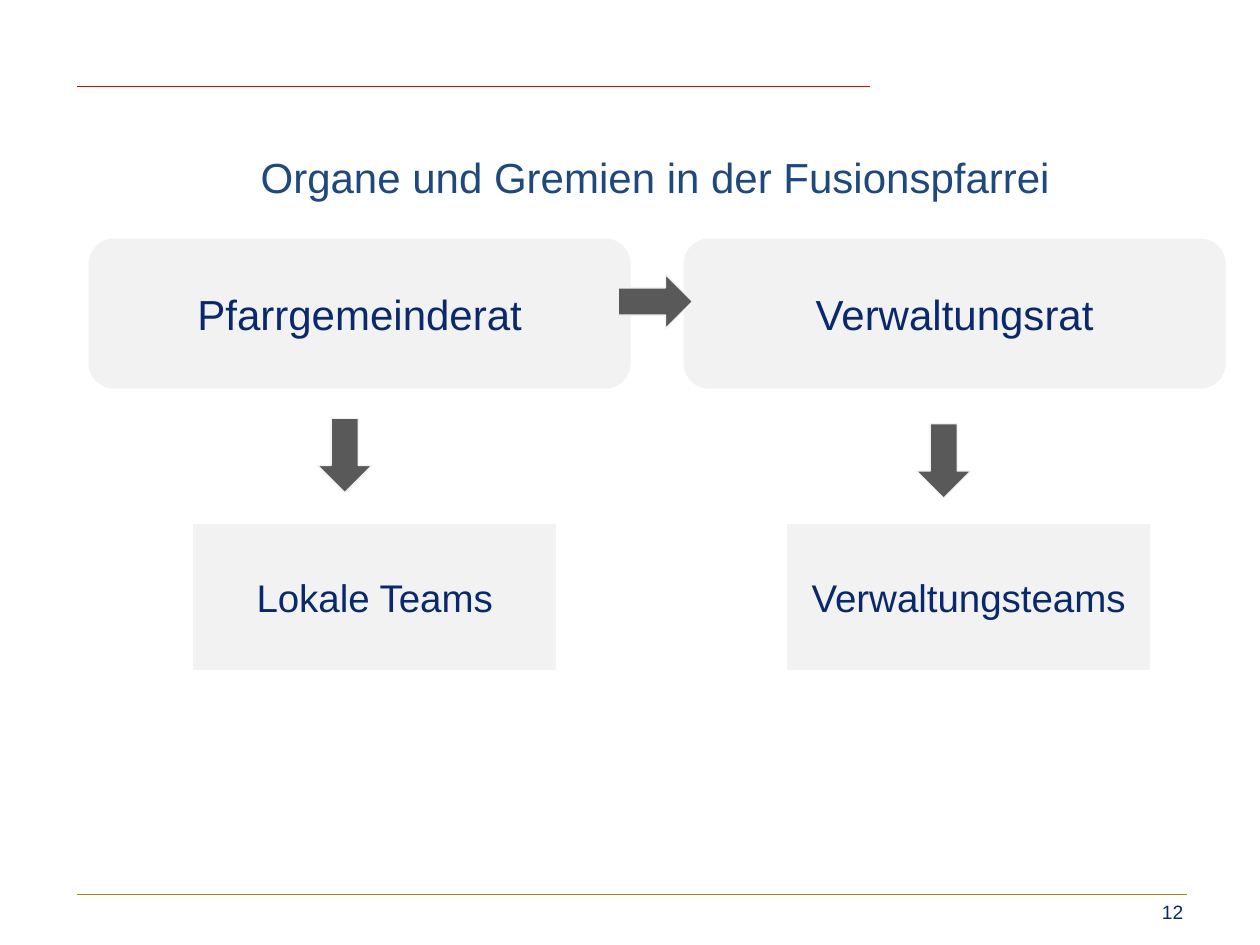
from lxml import etree
from pptx import Presentation
from pptx import util as u
from pptx.dml.color import RGBColor
from pptx.enum import shapes, text
from pptx.oxml import ns

NAVY = RGBColor(0x0A, 0x29, 0x6C)
BLUE = RGBColor(0x1F, 0x49, 0x7D)
RED = RGBColor(0xC4, 0x13, 0x00)
GOLD = RGBColor(0xA3, 0x8A, 0x00)
LIGHT = RGBColor(0xF2, 0xF2, 0xF2)
DARK = RGBColor(0x59, 0x59, 0x59)
SHAPE = shapes.MSO_SHAPE
ALIGN = text.PP_ALIGN


class Deck:
    font = "Arial"

    def __init__(self, prs):
        self.s = prs.slides.add_slide(prs.slide_layouts[6])

    def set_text(self, tf, words, size, color, align):
        tf.word_wrap = True
        p = tf.paragraphs[0]
        p.text = words
        p.alignment = align
        r = p.runs[0]
        r.font.name = self.font
        r.font.size = u.Pt(size)
        r.font.color.rgb = color

    def rule(self, x1, x2, y, color):
        ln = self.s.shapes.add_connector(
            shapes.MSO_CONNECTOR.STRAIGHT, u.Pt(x1), u.Pt(y), u.Pt(x2), u.Pt(y))
        ln.line.color.rgb = color
        ln.line.width = u.Pt(0.5)
        etree.SubElement(ln._element.spPr, ns.qn("a:effectLst"))

    def label(self, x, y, w, h, words, size, color, align):
        sp = self.s.shapes.add_textbox(u.Pt(x), u.Pt(y), u.Pt(w), u.Pt(h))
        self.set_text(sp.text_frame, words, size, color, align)

    def shape(self, kind, x, y, w, h, fill):
        sp = self.s.shapes.add_shape(kind, u.Pt(x), u.Pt(y), u.Pt(w), u.Pt(h))
        sp.shadow.inherit = False
        sp.fill.solid()
        sp.fill.fore_color.rgb = fill
        sp.line.color.rgb = LIGHT
        sp.line.width = u.Pt(0.75)
        return sp

    def box(self, kind, x, y, w, h, words, size):
        tf = self.shape(kind, x, y, w, h, LIGHT).text_frame
        tf.vertical_anchor = text.MSO_ANCHOR.MIDDLE
        self.set_text(tf, words, size, NAVY, ALIGN.CENTER)

    def arrow(self, x, y, rotation=0):
        sp = self.shape(SHAPE.DOWN_ARROW, x, y, 31, 42.5, DARK)
        sp.rotation = rotation


def main():
    prs = Presentation()
    prs.slide_width, prs.slide_height = u.Pt(720), u.Pt(540)
    d = Deck(prs)

    d.rule(44, 497, 49.2, RED)
    d.label(615.6, 511.2, 67.7, 28.8, "12", 11, NAVY, ALIGN.RIGHT)
    d.rule(44, 678.2, 511, GOLD)
    d.label(61.2, 83, 626.4, 298, "Organe und Gremien in der Fusionspfarrei",
            24, BLUE, ALIGN.CENTER)

    for x, words in ((51, "Pfarrgemeinderat"), (391, "Verwaltungsrat")):
        d.box(SHAPE.ROUNDED_RECTANGLE, x, 136.7, 309, 85, words, 24)
    for x, words in ((110.6, "Lokale Teams"), (450, "Verwaltungsteams")):
        d.box(SHAPE.RECTANGLE, x, 300, 207, 82.4, words, 22)

    d.arrow(181.5, 239)
    d.arrow(523.8, 242.2)
    d.arrow(359, 151, 270)

    prs.save("out.pptx")


if __name__ == "__main__":
    main()
